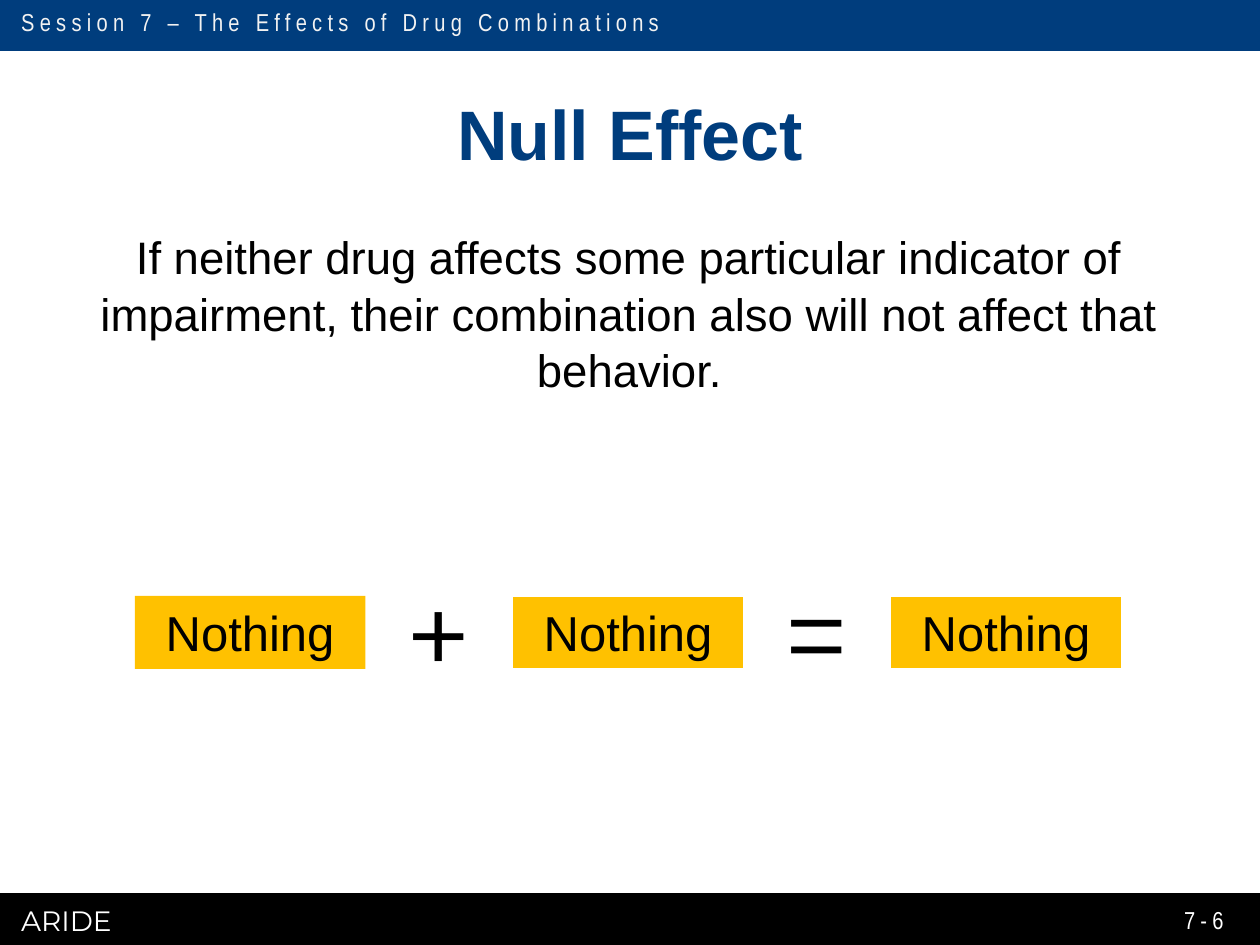
import pptx
import pptx.dml.color
import pptx.enum.shapes
import pptx.enum.text
import pptx.util

Inches, Pt = pptx.util.Inches, pptx.util.Pt
ALIGN = pptx.enum.text.PP_ALIGN
ANCHOR = pptx.enum.text.MSO_ANCHOR

COLORS = {"navy": "003D7D", "black": "000000", "white": "FFFFFF",
          "pale": "F2F2F2", "amber": "FFC100"}

SESSION = "Session 7 – The Effects of Drug Combinations"
COURSE = "ARIDE"
PAGE = "7-6"
TITLE = "Null Effect"
RULE = ("If neither drug affects some particular indicator of impairment, "
        "their combination also will not affect that behavior.")
EFFECTS = ["Nothing", "Nothing", "Nothing"]
OPERATORS = ["+", "="]

EFFECT_LEFT, OPERATOR_LEFT, STEP = 1.07, 3, 3


def rgb(name):
    return pptx.dml.color.RGBColor.from_string(COLORS[name])


def write(shape, text, size, font="Arial", color="black", align=ALIGN.LEFT,
          anchor=ANCHOR.TOP, bold=False, tracking=0, inset=True):
    frame = shape.text_frame
    frame.word_wrap = True
    frame.vertical_anchor = anchor
    if not inset:
        frame.margin_left = frame.margin_right = 0
        frame.margin_top = frame.margin_bottom = 0
    frame.text = text
    paragraph = frame.paragraphs[0]
    paragraph.alignment = align
    run = paragraph.runs[0]
    run.font.name = font
    run.font.size = Pt(size)
    run.font.bold = bold
    run.font.color.rgb = rgb(color)
    if tracking:
        run.font._element.set("spc", str(tracking * 100))
    return paragraph


def add_text(slide, box, text, size, **style):
    return write(slide.shapes.add_textbox(*map(Inches, box)), text, size, **style)


def add_block(slide, box, fill, line=None, width=2):
    block = slide.shapes.add_shape(
        pptx.enum.shapes.MSO_SHAPE.RECTANGLE, *map(Inches, box))
    block.shadow.inherit = False
    block.fill.solid()
    block.fill.fore_color.rgb = rgb(fill)
    if line:
        block.line.color.rgb = rgb(line)
        block.line.width = Pt(width)
    else:
        block.line.fill.background()
    return block


def main():
    deck = pptx.Presentation()
    deck.slide_width, deck.slide_height = Inches(10), Inches(7.5)
    slide = deck.slides.add_slide(deck.slide_layouts[6])

    add_block(slide, (0, -0.01, 10, 0.4), "navy", "navy")
    add_text(slide, (0.07, 0.01, 7.37, 0.34), SESSION, 14,
             font="Arial Narrow", color="pale", tracking=3)
    add_block(slide, (0, 7.1, 10, 0.4), "black", "black")
    add_text(slide, (0.07, 7.12, 5.72, 0.37), COURSE, 16,
             font="Montserrat", color="white")
    add_text(slide, (7.48, 7.1, 2.33, 0.4), PAGE, 14, font="Arial Narrow",
             color="white", align=ALIGN.RIGHT, anchor=ANCHOR.MIDDLE, tracking=3)

    add_text(slide, (0.5, 0.7, 9, 0.7), TITLE, 40, color="navy", bold=True,
             align=ALIGN.CENTER, anchor=ANCHOR.MIDDLE, inset=False)
    rule = add_text(slide, (0.22, 1.8, 9.55, 1.56), RULE, 26,
                    align=ALIGN.CENTER, inset=False)
    rule.line_spacing = 1.04
    rule.space_after = Pt(6)

    for i, effect in enumerate(EFFECTS):
        block = add_block(slide, (EFFECT_LEFT + i * STEP, 4.73, 1.83, 0.58),
                          "amber", "white" if i else None, 0.75)
        write(block, effect, 28, align=ALIGN.CENTER)
    for i, operator in enumerate(OPERATORS):
        add_text(slide, (OPERATOR_LEFT + i * STEP, 4.41, 0.97, 1.21), operator,
                 66, font="Montserrat", align=ALIGN.CENTER)

    deck.save("out.pptx")


if __name__ == "__main__":
    main()
